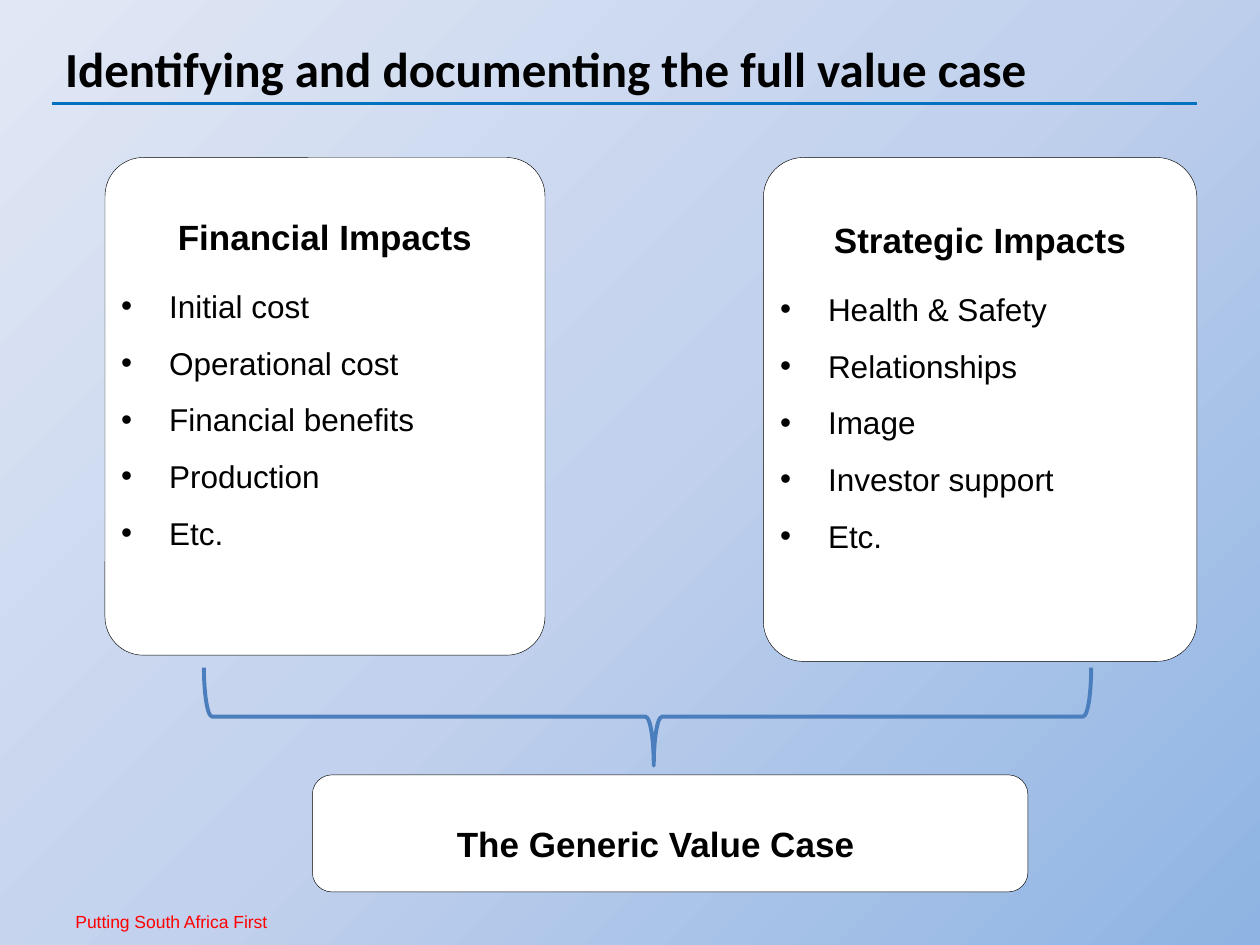
from typing import NamedTuple

from lxml.etree import SubElement
from pptx import Presentation
from pptx.dml.color import RGBColor
from pptx.enum.shapes import MSO_CONNECTOR as Connector, MSO_SHAPE as Preset
from pptx.enum.text import MSO_ANCHOR as Anchor, PP_ALIGN as Align
from pptx.oxml import parse_xml
from pptx.oxml.ns import nsdecls, qn
from pptx.util import Inches, Pt

BLACK = RGBColor(0x00, 0x00, 0x00)
WHITE = RGBColor(0xFF, 0xFF, 0xFF)
RED = RGBColor(0xFF, 0x00, 0x00)
RULE_BLUE = RGBColor(0x00, 0x70, 0xC0)
BRACE_BLUE = RGBColor(0x4B, 0x7E, 0xBC)
BACKGROUND_STOPS = (
    (0, RGBColor(0x8E, 0xB4, 0xE3)),
    (50, RGBColor(0xC2, 0xD1, 0xED)),
    (100, RGBColor(0xE1, 0xE8, 0xF5)),
)

SLIDE_WIDTH, SLIDE_HEIGHT = Inches(10), Inches(7.5)
COLUMNS, ROWS = 24, 18
INSET = 0.04
BULLET_INDENT = Inches(0.38)


class Area(NamedTuple):
    column: float
    row: float
    columns: float
    rows: float

    def emu(self):
        return (across(self.column), down(self.row),
                across(self.columns), down(self.rows))


class Card(NamedTuple):
    area: Area
    corner: float
    heading: str
    items: tuple = ()
    right_inset: float = INSET
    bottom_inset: float = INSET


CARDS = (
    Card(Area(2, 3, 8.38, 9.48), 0.087, "Financial Impacts",
         ("Initial cost", "Operational cost", "Financial benefits",
          "Production", "Etc."), bottom_inset=0.57),
    Card(Area(14.54, 3, 8.26, 9.6), 0.093, "Strategic Impacts",
         ("Health & Safety", "Relationships", "Image",
          "Investor support", "Etc."), bottom_inset=0.57),
    Card(Area(5.95, 14.76, 13.63, 2.23), 0.167, "The Generic Value Case",
         right_inset=0.27),
)


def across(columns: float) -> int:
    return round(SLIDE_WIDTH * columns / COLUMNS)


def down(rows: float) -> int:
    return round(SLIDE_HEIGHT * rows / ROWS)


def set_font(paragraph, size: float, color: RGBColor, bold: bool = False,
             name: str = "Arial") -> None:
    for run in paragraph.runs:
        run.font.name, run.font.size, run.font.bold = name, Pt(size), bold
        run.font.color.rgb = color


def set_insets(text_frame, right: float = INSET, bottom: float = INSET) -> None:
    text_frame.margin_left = text_frame.margin_top = Inches(INSET)
    text_frame.margin_right, text_frame.margin_bottom = Inches(right), Inches(bottom)


def paint_background(slide) -> None:
    slide.background.fill.gradient()
    old = slide.background._cSld.find(".//" + qn("a:gradFill"))
    stops = "".join(
        f'<a:gs pos="{position * 1000}"><a:srgbClr val="{color}"/></a:gs>'
        for position, color in BACKGROUND_STOPS)
    gradient = parse_xml(
        f'<a:gradFill {nsdecls("a")} rotWithShape="1"><a:gsLst>{stops}</a:gsLst>'
        '<a:path path="circle"><a:fillToRect l="100000" t="100000"/></a:path>'
        '</a:gradFill>')
    old.getparent().replace(old, gradient)


def add_title(slide, area: Area, text: str) -> None:
    title = slide.shapes.title
    title.left, title.top, title.width, title.height = area.emu()
    title.text_frame.text = text
    title.text_frame.vertical_anchor = Anchor.MIDDLE
    paragraph = title.text_frame.paragraphs[0]
    paragraph.alignment = Align.LEFT
    set_font(paragraph, 28, BLACK, True, "Calibri")


def add_rule(slide, start: float, end: float, row: float) -> None:
    rule = slide.shapes.add_connector(
        Connector.STRAIGHT, across(start), down(row), across(end), down(row))
    rule.line.color.rgb, rule.line.width = RULE_BLUE, Pt(2)
    SubElement(rule._element.spPr, qn("a:effectLst"))


def add_bullet(paragraph) -> None:
    properties = paragraph._p.get_or_add_pPr()
    properties.set("marL", str(BULLET_INDENT))
    properties.set("indent", str(-BULLET_INDENT))
    SubElement(properties, qn("a:buFont"), typeface="Arial")
    SubElement(properties, qn("a:buChar"), char="•")


def add_card(slide, card: Card) -> None:
    shape = slide.shapes.add_shape(Preset.ROUNDED_RECTANGLE, *card.area.emu())
    shape.adjustments[0] = card.corner
    shape.shadow.inherit = False
    shape.fill.solid()
    shape.fill.fore_color.rgb = WHITE
    shape.line.color.rgb, shape.line.width = BLACK, Pt(0.25)
    text_frame = shape.text_frame
    text_frame.word_wrap = True
    text_frame.vertical_anchor = Anchor.MIDDLE
    set_insets(text_frame, card.right_inset, card.bottom_inset)
    text_frame.text = "\n".join((card.heading, *card.items))
    for index, paragraph in enumerate(text_frame.paragraphs):
        paragraph.line_spacing = 1.5
        if index == 0:
            paragraph.alignment = Align.CENTER
            set_font(paragraph, 20, BLACK, True)
        else:
            paragraph.alignment = Align.LEFT
            paragraph.space_before = Pt(6 if index == 1 else 0)
            add_bullet(paragraph)
            set_font(paragraph, 18, BLACK)


def add_brace(slide, area: Area) -> None:
    brace = slide.shapes.add_shape(Preset.LEFT_BRACE, *area.emu())
    brace.rotation = 270
    brace.adjustments[0], brace.adjustments[1] = 0.083, 0.507
    brace.shadow.inherit = False
    brace.fill.background()
    brace.line.color.rgb, brace.line.width = BRACE_BLUE, Pt(2.25)


def add_footer(slide, area: Area, text: str) -> None:
    text_frame = slide.shapes.add_textbox(*area.emu()).text_frame
    text_frame.word_wrap = True
    set_insets(text_frame)
    text_frame.text = text
    set_font(text_frame.paragraphs[0], 10, RED)


def main() -> None:
    presentation = Presentation()
    presentation.slide_width, presentation.slide_height = SLIDE_WIDTH, SLIDE_HEIGHT
    slide = presentation.slides.add_slide(presentation.slide_layouts[5])
    paint_background(slide)
    add_footer(slide, Area(1.34, 17.26, 4.06, 0.6), "Putting South Africa First")
    add_title(slide, Area(1, 0.6, 21.8, 1.37),
              "Identifying and documenting the full value case")
    add_rule(slide, 1, 22.8, 1.97)
    for card in CARDS:
        add_card(slide, card)
    add_brace(slide, Area(11.4, 5.2, 1.87, 16.9))
    presentation.save("out.pptx")


if __name__ == "__main__":
    main()
